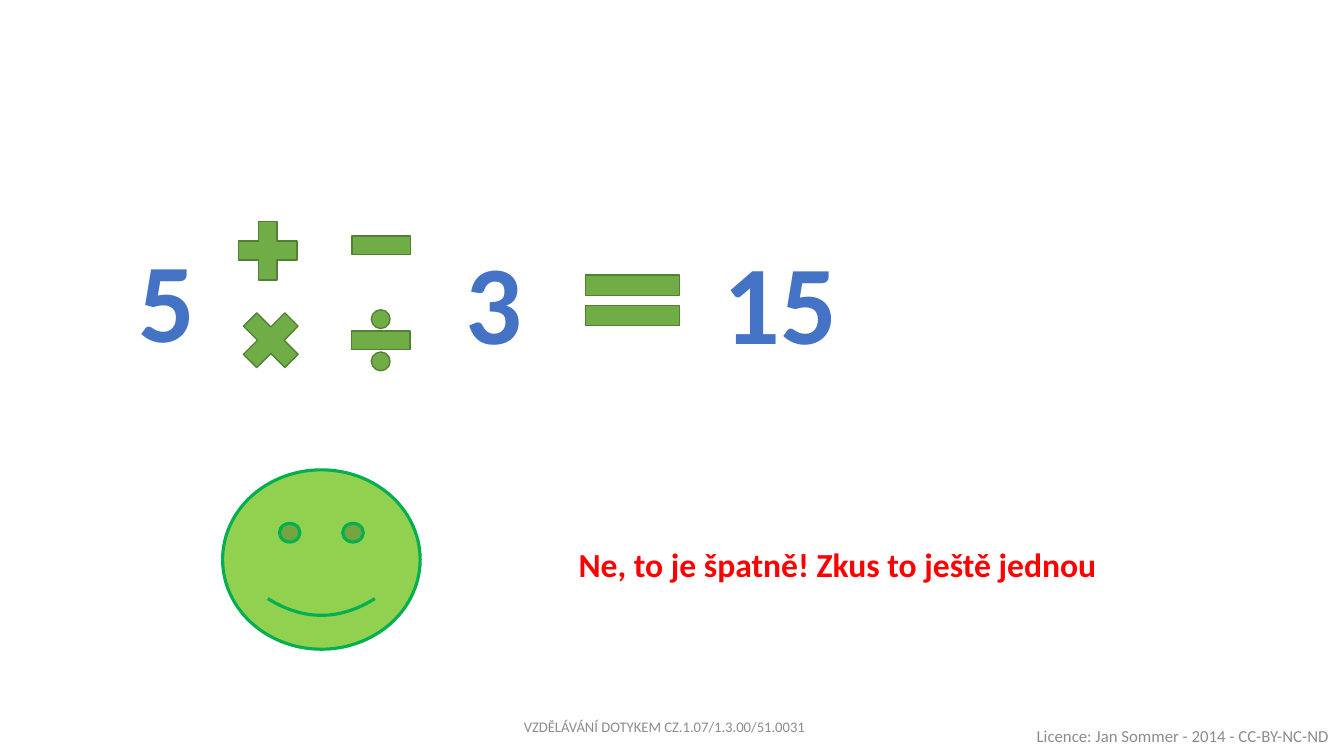
"""Build a slide with a sum whose operator is to be picked."""
from pptx import Presentation
from pptx.dml.color import RGBColor
from pptx.enum.shapes import MSO_SHAPE
from pptx.enum.text import MSO_ANCHOR, PP_ALIGN
from pptx.util import Cm, Pt

PLUS = MSO_SHAPE.MATH_PLUS
MINUS = MSO_SHAPE.MATH_MINUS
TIMES = MSO_SHAPE.MATH_MULTIPLY
DIVIDE = MSO_SHAPE.MATH_DIVIDE
EQUAL = MSO_SHAPE.MATH_EQUAL
SMILE = MSO_SHAPE.SMILEY_FACE
TOP, MIDDLE = MSO_ANCHOR.TOP, MSO_ANCHOR.MIDDLE
LEFT, CENTER = PP_ALIGN.LEFT, PP_ALIGN.CENTER

FONT = "Calibri"
BLANK = 6
COLORS = {
    "number": "4472C4",
    "sign": "70AD47",
    "edge": "538035",
    "face": "92D050",
    "rim": "00B050",
    "wrong": "FF0000",
    "note": "8C8C8C",
}


def color(name):
    """Return the named colour."""
    return RGBColor.from_string(COLORS[name])


def add_text(slide, text, box, size, tint, bold=False, anchor=TOP, align=LEFT):
    """Add a line of text in a box given in centimetres."""
    frame = slide.shapes.add_textbox(*map(Cm, box)).text_frame
    frame.word_wrap = True
    frame.vertical_anchor = anchor
    frame.text = text
    line = frame.paragraphs[0]
    line.alignment = align
    font = line.runs[0].font
    font.name, font.size, font.bold = FONT, Pt(size), bold
    font.color.rgb = color(tint)


def add_sign(slide, kind, box, fill="sign", edge="edge", width=1):
    """Add a filled preset shape in a box given in centimetres."""
    sign = slide.shapes.add_shape(kind, *map(Cm, box))
    sign.shadow.inherit = False
    sign.fill.solid()
    sign.fill.fore_color.rgb = color(fill)
    sign.line.color.rgb = color(edge)
    sign.line.width = Pt(width)


def add_sum(slide):
    """Add the numbers, the four operators and the equals sign."""
    for text, left, top, width in (
        ("5", 3.23, 5.69, 1.73),
        ("3", 11.48, 5.74, 1.73),
        ("15", 17.98, 5.74, 3.81),
    ):
        add_text(slide, text, (left, top, width, 3.68), 80, "number", True)
    side = 2.01
    for kind, left, top in (
        (PLUS, 5.74, 5.31),
        (MINUS, 8.61, 5.18),
        (TIMES, 5.82, 7.57),
        (DIVIDE, 8.59, 7.57),
    ):
        add_sign(slide, kind, (left, top, side, side))
    add_sign(slide, EQUAL, (14.33, 6.48, 3.23, 2.18))


def main():
    """Build and save the slide."""
    deck = Presentation()
    deck.slide_width, deck.slide_height = Cm(33.87), Cm(19.05)
    slide = deck.slides.add_slide(deck.slide_layouts[BLANK])
    add_sum(slide)
    add_sign(slide, SMILE, (5.61, 11.84, 4.98, 4.52), "face", "rim", 2.25)
    add_text(slide, "Ne, to je špatně! Zkus to ještě jednou",
             (14.33, 13.58, 14.78, 1.27), 24, "wrong", True)
    add_text(slide, "Licence: Jan Sommer - 2014 - CC-BY-NC-ND",
             (25.76, 18.03, 8.1, 1.02), 12, "note", anchor=MIDDLE, align=CENTER)
    add_text(slide, "VZDĚLÁVÁNÍ DOTYKEM CZ.1.07/1.3.00/51.0031",
             (12.95, 17.81, 8.05, 1.02), 10.5, "note", anchor=MIDDLE)
    deck.save("out.pptx")


if __name__ == "__main__":
    main()
